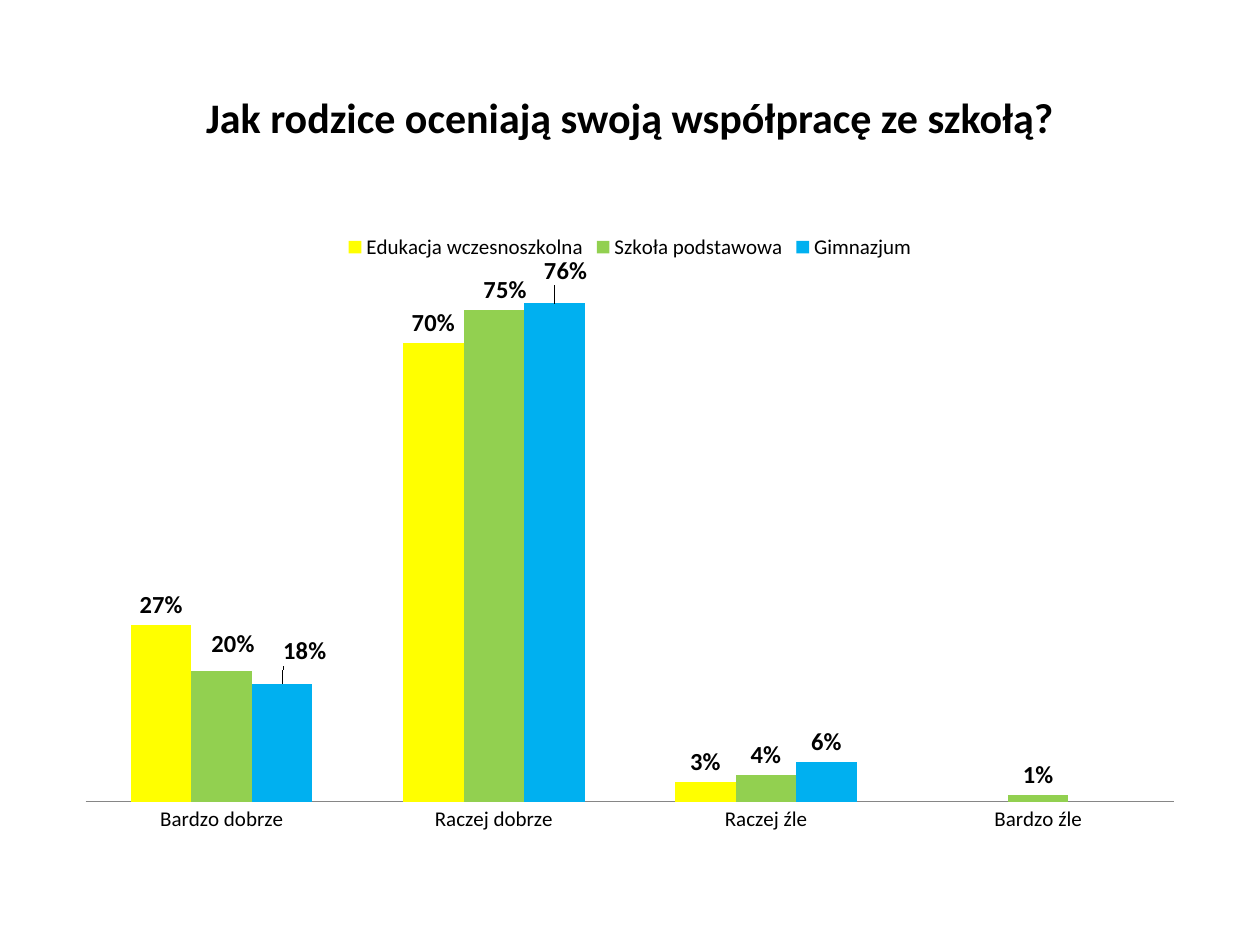
from dataclasses import dataclass

from lxml import etree
from pptx import Presentation
from pptx.chart.data import CategoryChartData
from pptx.dml.color import RGBColor
from pptx.enum.chart import XL_CHART_TYPE, XL_LABEL_POSITION, XL_LEGEND_POSITION, XL_TICK_MARK
from pptx.enum.text import MSO_ANCHOR, PP_ALIGN
from pptx.oxml.ns import qn
from pptx.util import Inches, Pt

COLUMNS = XL_CHART_TYPE.COLUMN_CLUSTERED
OUTSIDE_END = XL_LABEL_POSITION.OUTSIDE_END
LEGEND_TOP = XL_LEGEND_POSITION.TOP
NO_TICK = XL_TICK_MARK.NONE
TITLE_ONLY = 5


@dataclass(frozen=True)
class Theme:
    """Colours, font and type sizes of the slide."""
    font: str = "Calibri"
    ink: RGBColor = RGBColor(0, 0, 0)
    axis: RGBColor = RGBColor(0x86, 0x86, 0x86)
    schools: tuple = ("FFFF00", "92D050", "00B0F0")
    title_size: Pt = Pt(24)
    base_size: Pt = Pt(10)
    axis_size: Pt = Pt(12)
    label_size: Pt = Pt(14)


THEME = Theme()
QUESTION = "Jak rodzice oceniają swoją współpracę ze szkołą?"
RATINGS = ("Bardzo dobrze", "Raczej dobrze", "Raczej źle", "Bardzo źle")
SHARES = {
    "Edukacja wczesnoszkolna": (0.27, 0.7, 0.03, None),
    "Szkoła podstawowa": (0.2, 0.75, 0.04, 0.01),
    "Gimnazjum": (0.18, 0.76, 0.06, None),
}
LABEL_SHIFTS = {
    "Szkoła podstawowa": {0: (0.01, -0.01), 1: (0.01, 0)},
    "Gimnazjum": {0: (0.02, -0.02), 1: (0.01, -0.02)},
}


def style_font(font, size, bold=False):
    """Apply the theme's font and ink at a given size."""
    font.name = THEME.font
    font.size = size
    font.bold = bold
    font.color.rgb = THEME.ink


def add_title(slide, left, top, width, height):
    """Place the question in the title placeholder."""
    title = slide.shapes.title
    title.left, title.top, title.width, title.height = left, top, width, height
    title.text_frame.text = QUESTION
    title.text_frame.vertical_anchor = MSO_ANCHOR.MIDDLE
    heading = title.text_frame.paragraphs[0]
    heading.alignment = PP_ALIGN.CENTER
    style_font(heading.font, THEME.title_size, bold=True)


def shift_label(series, index, x, y):
    """Move one value label by fractions of the chart's size."""
    label = series.points[index].data_label
    style_font(label.font, THEME.label_size, bold=True)
    label.position = OUTSIDE_END
    element = series.data_labels._element.xpath(f'c:dLbl[c:idx/@val="{index}"]')[0]
    layout = etree.Element(qn("c:layout"))
    manual = etree.SubElement(layout, qn("c:manualLayout"))
    for axis, offset in (("x", x), ("y", y)):
        etree.SubElement(manual, qn(f"c:{axis}")).set("val", str(offset))
    element.insert(1, layout)


def style_series(series, color):
    """Colour one school's columns and label their values."""
    series.format.fill.solid()
    series.format.fill.fore_color.rgb = RGBColor.from_string(color)
    series.invert_if_negative = False
    labels = series.data_labels
    labels.show_value = True
    labels.number_format = "0%"
    labels.number_format_is_linked = False
    labels.position = OUTSIDE_END
    style_font(labels.font, THEME.label_size, bold=True)
    for index, (x, y) in LABEL_SHIFTS.get(series.name, {}).items():
        shift_label(series, index, x, y)


def add_ratings_chart(slide, left, top, width, height):
    """Chart the share of each rating by school type."""
    data = CategoryChartData(number_format="0%")
    data.categories = RATINGS
    for school, shares in SHARES.items():
        data.add_series(school, shares)
    chart = slide.shapes.add_chart(COLUMNS, left, top, width, height, data).chart
    chart.has_title = False
    style_font(chart.font, THEME.base_size)

    chart.has_legend = True
    chart.legend.position = LEGEND_TOP
    chart.legend.include_in_layout = False
    style_font(chart.legend.font, THEME.axis_size)

    ratings = chart.category_axis
    ratings.major_tick_mark = NO_TICK
    ratings.format.line.color.rgb = THEME.axis
    style_font(ratings.tick_labels.font, THEME.axis_size)

    percent = chart.value_axis
    percent.minimum_scale, percent.maximum_scale = 0, 0.8
    percent.has_major_gridlines = False
    percent.visible = False

    plot = chart.plots[0]
    plot.gap_width, plot.overlap = 150, 0
    plot.vary_by_categories = False
    for series, color in zip(plot.series, THEME.schools):
        style_series(series, color)


def main():
    """Build and save the slide."""
    deck = Presentation()
    deck.slide_width, deck.slide_height = Inches(10), Inches(7.5)
    slide = deck.slides.add_slide(deck.slide_layouts[TITLE_ONLY])
    margin, content_width = Inches(0.5), Inches(9)
    add_title(slide, margin, Inches(0.3), content_width, Inches(1.25))
    add_ratings_chart(slide, margin, Inches(1.75), content_width, Inches(4.95))
    deck.save("out.pptx")


if __name__ == "__main__":
    main()
